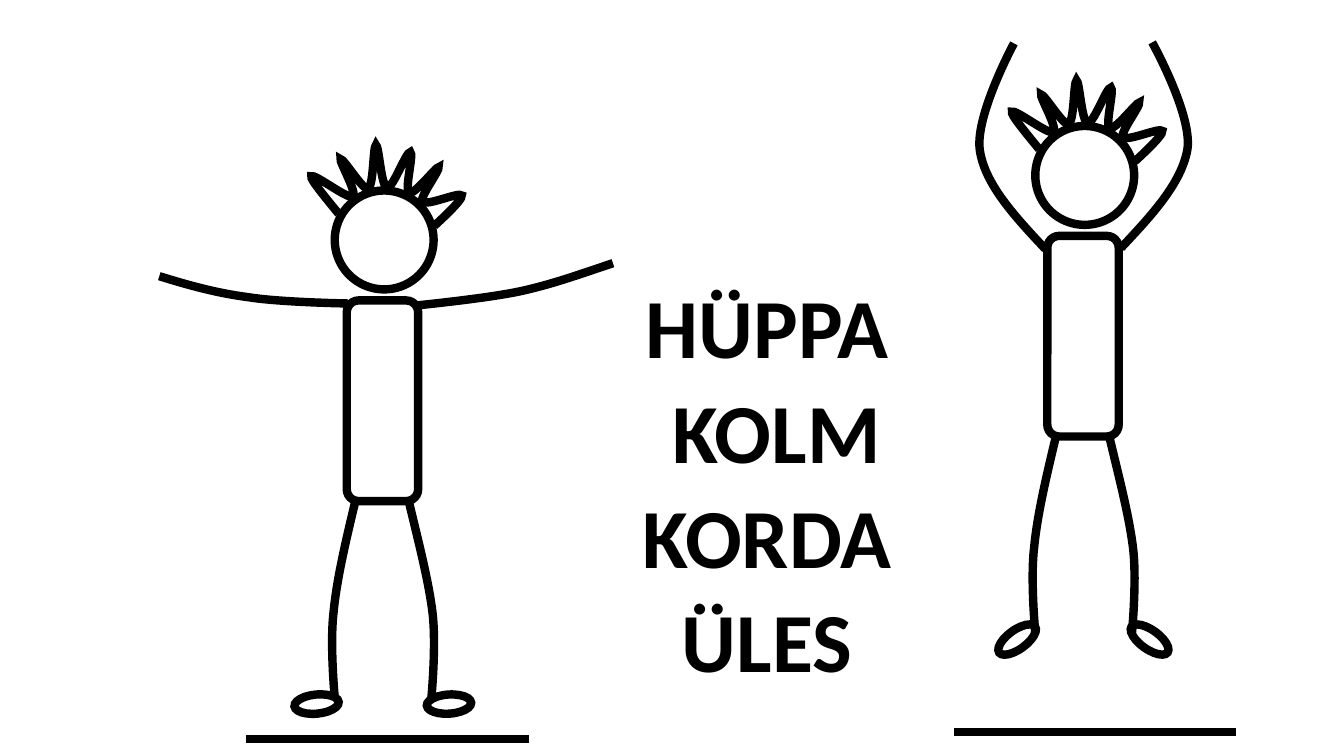
import pptx
import pptx.dml.color
import pptx.enum.shapes
import pptx.enum.text
import pptx.oxml
import pptx.oxml.ns
import pptx.oxml.xmlchemy
import pptx.util

Pt = pptx.util.Pt
qn = pptx.oxml.ns.qn
OxmlElement = pptx.oxml.xmlchemy.OxmlElement
SHAPE = pptx.enum.shapes.MSO_SHAPE
BLACK = pptx.dml.color.RGBColor(0, 0, 0)
STROKE = 6

# Body parts are in points from the top left corner of the torso.
# Each curve is a start point followed by cubic triples: control, control, end.
LEFT_LEG = [(5.8, 144.7), (-0.7, 172), (-7.2, 199.4), (-9.4, 222.5),
            (-12.2, 245.5), (-8.6, 283.7), (-8.6, 283.7)]
RIGHT_LEG = [(44.6, 144.7), (51.1, 172), (58.3, 199.4), (61.2, 222.5),
             (64.1, 245.5), (60.5, 283.7), (60.5, 283.7)]
ARMS_OUT = [
    [(-133.9, -17.3), (-113, -10.8), (-92.2, -5), (-69.8, -2.2),
     (-47.5, 1.4), (0.7, 2.2), (0.7, 2.2)],
    [(190.1, -26.6), (168.5, -19.4), (146.9, -11.5), (123.8, -6.5),
     (100.1, -1.4), (49.7, 3.6), (49.7, 3.6)],
]
ARMS_UP = [
    [(-1.4, 9.4), (-23, -13.7), (-44.6, -36.7), (-48.2, -61.2),
     (-51.8, -85.7), (-23.8, -137.5), (-23.8, -137.5)],
    [(52.6, 8.6), (74.2, -14.4), (95.8, -37.4), (100.1, -61.9),
     (103.7, -86.4), (74.9, -138.2), (74.9, -138.2)],
]
HAIR = [
    (-5.8, -61.9),
    (-15.8, -74.2), (-26.6, -87.1), (-25.2, -88.6),
    (-23, -90.7), (0.7, -72), (4.3, -74.2),
    (7.9, -76.3), (-5.8, -100.1), (-4.3, -100.8),
    (-2.2, -101.5), (11.5, -78.5), (15.1, -79.9),
    (19.4, -81.4), (18.7, -110.2), (20.9, -110.9),
    (23, -110.9), (24.5, -81.4), (28.8, -80.6),
    (33.1, -79.9), (42.5, -106.6), (45.4, -105.8),
    (48.2, -105.1), (41, -78.5), (44.6, -77),
    (48.2, -74.9), (64.1, -95.8), (65.5, -95),
    (67, -93.6), (51.8, -73.4), (54, -70.6),
    (56.9, -67), (80.6, -77.8), (82.1, -74.9),
    (83.5, -72), (62.6, -53.3), (62.6, -53.3),
]


def set_outline(sp):
    sp.shadow.inherit = False
    sp.fill.background()
    sp.line.color.rgb = BLACK
    sp.line.width = Pt(STROKE)
    miter = OxmlElement("a:miter")
    miter.set("lim", "800000")
    sp.line._get_or_add_ln().append(miter)


def add_outline(shapes, kind, x, y, w, h, rotation=0):
    sp = shapes.add_shape(kind, Pt(x), Pt(y), Pt(w), Pt(h))
    sp.rotation = rotation
    set_outline(sp)


def add_curve(shapes, origin, points):
    """Draw a freeform, turning every three line segments into one cubic."""
    left, top = origin
    start, *rest = [(Pt(left + x), Pt(top + y)) for x, y in points]
    builder = shapes.build_freeform(*start)
    builder.add_line_segments(rest, close=False)
    sp = builder.convert_to_shape()
    segments = list(sp._element.iter(qn("a:lnTo")))
    for i in range(0, len(segments), 3):
        cubic = OxmlElement("a:cubicBezTo")
        segments[i].addprevious(cubic)
        for segment in segments[i:i + 3]:
            cubic.append(segment[0])
            segment.getparent().remove(segment)
    set_outline(sp)


def add_ground(shapes, x, y, length):
    line = shapes.add_connector(pptx.enum.shapes.MSO_CONNECTOR.STRAIGHT,
                                Pt(x), Pt(y), Pt(x + length), Pt(y))
    line.line.color.rgb = BLACK
    line.line.width = Pt(STROKE)
    line._element.spPr.append(OxmlElement("a:effectLst"))


def add_figure(slide, origin, arms, foot_angles):
    shapes = slide.shapes.add_group_shape().shapes
    x, y = origin
    add_outline(shapes, SHAPE.ROUNDED_RECTANGLE, x, y, 51, 143.3)
    add_outline(shapes, SHAPE.OVAL, x - 8.6, y - 78.5, 70.6, 70.6)
    for curve in [LEFT_LEG, RIGHT_LEG, HAIR, *arms]:
        add_curve(shapes, origin, curve)
    for foot_x, angle in zip((-37.4, 57.2), foot_angles):
        add_outline(shapes, SHAPE.OVAL, x + foot_x, y + 281.5, 31.7, 13.7, angle)


def add_text(slide, lines, x, y, w, h, size, font="Calibri", color=BLACK, bold=False):
    tf = slide.shapes.add_textbox(Pt(x), Pt(y), Pt(w), Pt(h)).text_frame
    tf.word_wrap = True
    for i, line in enumerate(lines):
        p = tf.add_paragraph() if i else tf.paragraphs[0]
        p.alignment = pptx.enum.text.PP_ALIGN.CENTER
        p.line_spacing = 0.9
        p.space_before = Pt(10)
        r = p.add_run()
        r.text = line
        r.font.name = font
        r.font.size = Pt(size)
        r.font.bold = bold
        r.font.color.rgb = color


def main():
    prs = pptx.Presentation()
    prs.slide_width, prs.slide_height = Pt(960), Pt(540)
    slide = prs.slides.add_slide(prs.slide_layouts[6])
    add_figure(slide, (748.1, 168.5), ARMS_UP, (324, 35.7))
    add_ground(slide.shapes, 681.1, 522.7, 202)
    add_figure(slide, (247.7, 214.6), ARMS_OUT, (354.4, 356.2))
    add_ground(slide.shapes, 175.7, 527.8, 202)
    add_text(slide, ["HÜPPA", " KOLM", " KORDA ", "ÜLES"],
             245.5, 200.9, 604.8, 92.2, size=60, bold=True)
    prs.save("out.pptx")


if __name__ == "__main__":
    main()
